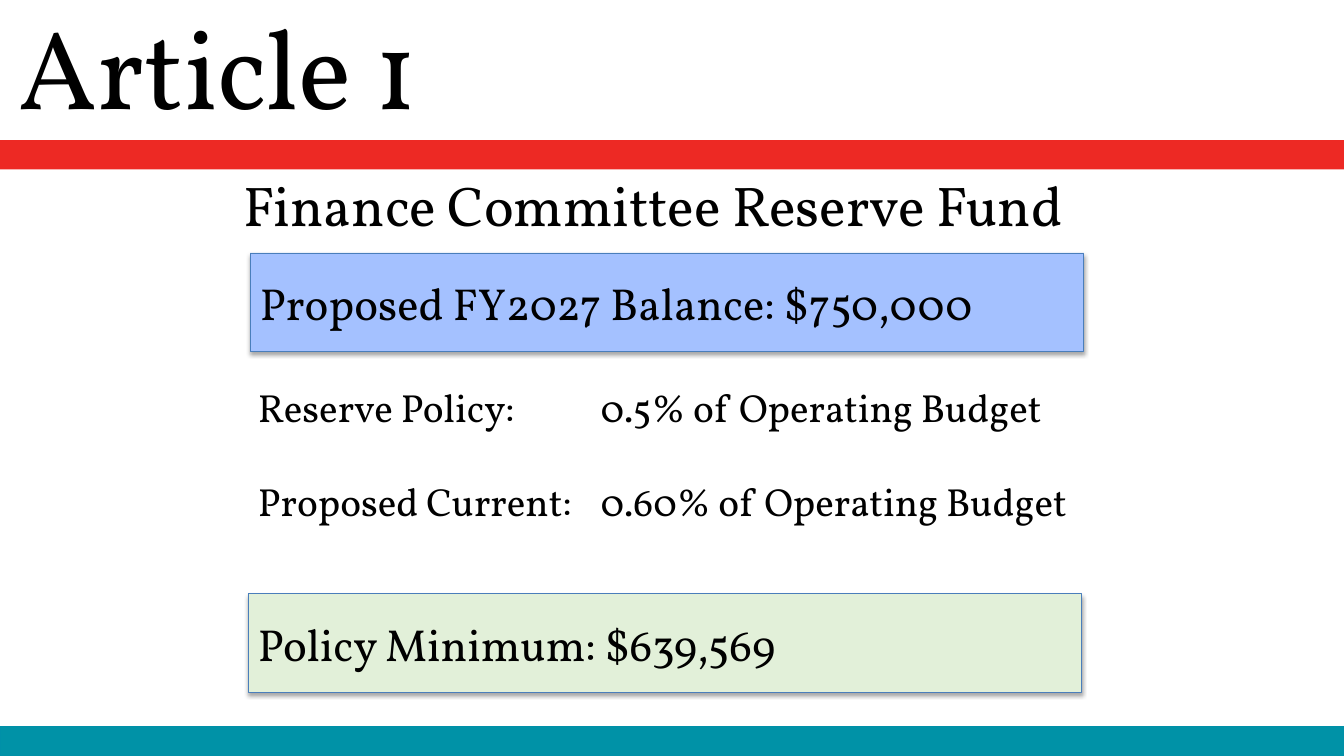
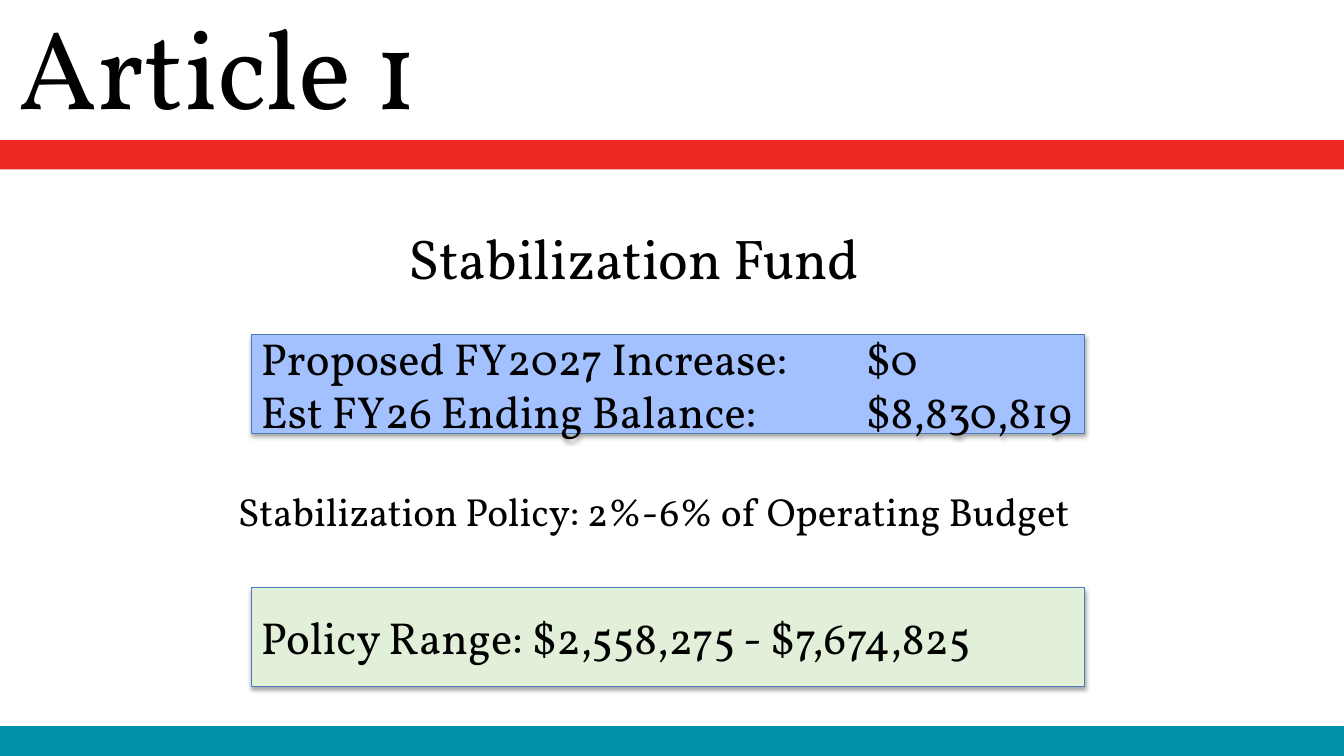
from dataclasses import dataclass

from lxml import etree
from pptx import Presentation
from pptx.dml.color import RGBColor
from pptx.enum.shapes import MSO_SHAPE
from pptx.enum.text import MSO_ANCHOR, PP_ALIGN
from pptx.oxml.ns import qn
from pptx.util import Inches, Pt

RECT = MSO_SHAPE.RECTANGLE
LEFT = PP_ALIGN.LEFT
TOP, MIDDLE = MSO_ANCHOR.TOP, MSO_ANCHOR.MIDDLE


@dataclass(frozen=True)
class Theme:
    """Colours, font and type sizes of the deck."""
    font: str = "Vollkorn"
    ink: str = "000000"
    red: str = "ED2924"
    teal: str = "0092A7"
    rim: str = "0090A8"
    blue: str = "A4C1FF"
    green: str = "E2F0D9"
    edge: str = "4A7EBB"
    title: int = 80
    head: int = 40
    card: int = 32
    body: int = 28


THEME = Theme()


def apply(target, values):
    """Set each named attribute of the target."""
    for name, value in values.items():
        setattr(target, name, value)


def add_tab(para, inches):
    """Give a paragraph one left tab stop."""
    stops = etree.SubElement(para._p.get_or_add_pPr(), qn("a:tabLst"))
    etree.SubElement(stops, qn("a:tab"), pos=str(Inches(inches)), algn="l")


def write(shape, lines, size, anchor=MIDDLE, tab=None, **form):
    """Fill a shape with left-aligned lines of text."""
    frame = shape.text_frame
    apply(frame, {"word_wrap": True, "vertical_anchor": anchor})
    gap = form.pop("gap", 0)
    for index, line in enumerate(lines):
        para = frame.add_paragraph() if index else frame.paragraphs[0]
        if tab:
            add_tab(para, tab)
        apply(para, {"alignment": LEFT, **form})
        if index and gap:
            para.space_before = Pt(gap)
        run = para.add_run()
        run.text = line
        apply(run.font, {"name": THEME.font, "size": Pt(size)})
        run.font.color.rgb = RGBColor.from_string(THEME.ink)


def add_text(slide, box, lines, size, **form):
    """Add a text box with the given lines."""
    shape = slide.shapes.add_textbox(*map(Inches, box))
    write(shape, lines, size, **form)


def add_rect(slide, box, fill, line=None, width=1):
    """Add a flat rectangle with an optional outline."""
    shape = slide.shapes.add_shape(RECT, *map(Inches, box))
    shape.shadow.inherit = False
    shape.fill.solid()
    shape.fill.fore_color.rgb = RGBColor.from_string(fill)
    if line:
        shape.line.color.rgb = RGBColor.from_string(line)
        shape.line.width = Pt(width)
    else:
        shape.line.fill.background()
    return shape


def add_shade(shape):
    """Cast a soft shadow straight down."""
    effects = shape._element.spPr.find(qn("a:effectLst"))
    shade = etree.SubElement(
        effects, qn("a:outerShdw"), blurRad=str(Pt(3.1)),
        dist=str(Pt(1.8)), dir="5400000", rotWithShape="0")
    tint = etree.SubElement(shade, qn("a:srgbClr"), val="000000")
    etree.SubElement(tint, qn("a:alpha"), val="35000")


def add_card(slide, left, top, fill, lines, tab=None):
    """Add a shaded box that holds key figures."""
    shape = add_rect(slide, (left, top, 8.27, 0.98), fill, THEME.edge, 0.5)
    add_shade(shape)
    write(shape, lines, THEME.card, tab=tab)


def add_page(deck, title):
    """Add a slide with the shared title and bands."""
    slide = deck.slides.add_slide(deck.slide_layouts[6])
    add_rect(slide, (0, 1.39, 13.33, 0.29), THEME.red)
    add_rect(slide, (0, 7.21, 13.33, 0.29), THEME.teal, THEME.rim)
    add_text(slide, (0.09, 0, 11.5, 1.45), [title], THEME.title,
             line_spacing=0.9)
    return slide


def add_head(slide, left, top, width, text):
    """Add the name of the fund."""
    add_text(slide, (left, top, width, 1.45), [text], THEME.head,
             line_spacing=0.9)


def add_reserve(deck):
    """Build the reserve fund slide."""
    slide = add_page(deck, "Article 1")
    add_head(slide, 2.32, 1.34, 8.7, "Finance Committee Reserve Fund")
    add_card(slide, 2.48, 2.51, THEME.blue,
             ["Proposed FY2027 Balance: $750,000"])
    add_text(slide, (2.46, 3.75, 8.55, 2.46),
             ["Reserve Policy:\t0.5% of Operating Budget",
              "Proposed Current:\t0.60% of Operating Budget"],
             THEME.body, anchor=TOP, tab=3.4, gap=33.6)
    add_card(slide, 2.46, 5.89, THEME.green, ["Policy Minimum: $639,569"])


def add_stable(deck):
    """Build the stabilization fund slide."""
    slide = add_page(deck, "Article 1")
    add_head(slide, 3.95, 1.87, 9.3, "Stabilization Fund")
    add_card(slide, 2.49, 3.32, THEME.blue,
             ["Proposed FY2027 Increase:\t$0",
              "Est FY26 Ending Balance:\t$8,830,819"], tab=6)
    add_text(slide, (2.26, 4.79, 9.28, 1.04),
             ["Stabilization Policy: 2%-6% of Operating Budget"],
             THEME.body, anchor=TOP)
    add_card(slide, 2.49, 5.83, THEME.green,
             ["Policy Range: $2,558,275 - $7,674,825"])


def main():
    """Build and save the deck."""
    deck = Presentation()
    apply(deck, {"slide_width": Inches(13.33), "slide_height": Inches(7.5)})
    add_reserve(deck)
    add_stable(deck)
    deck.save("out.pptx")


if __name__ == "__main__":
    main()
